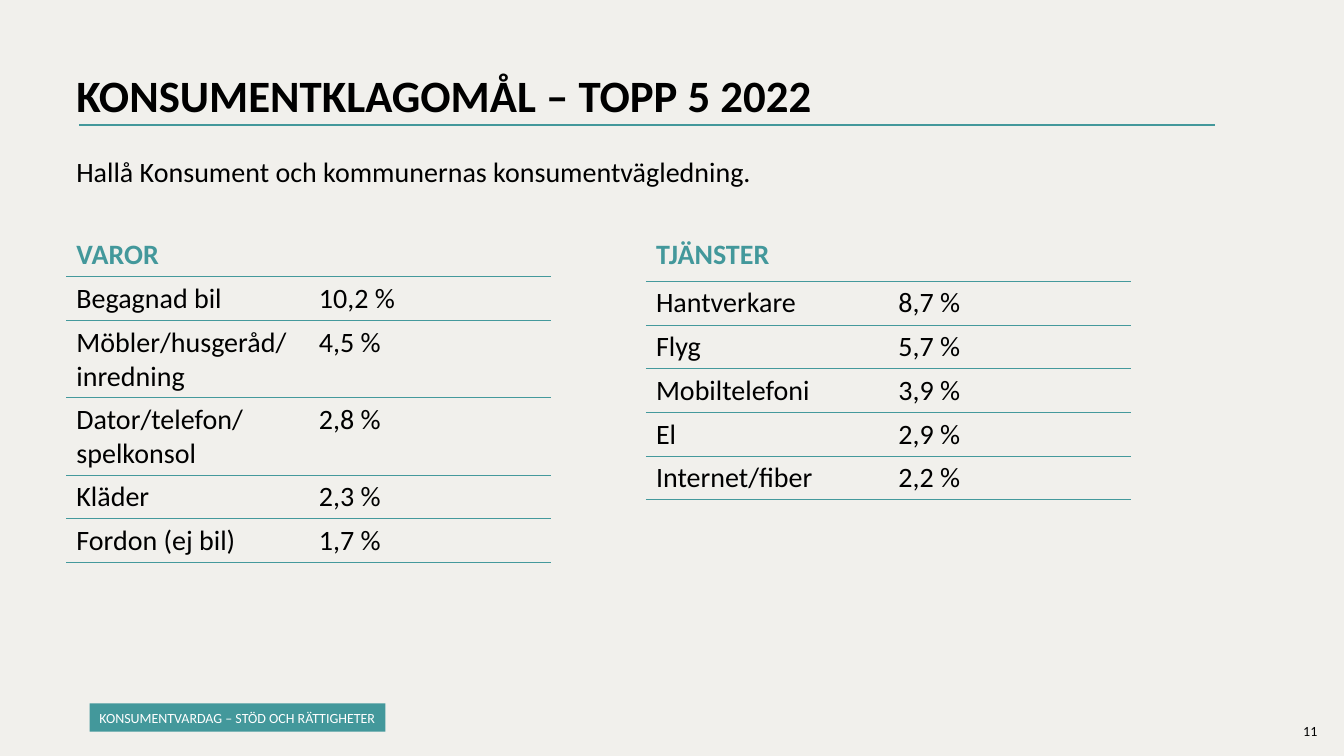
import pptx
import pptx.dml.color
import pptx.enum.shapes
import pptx.enum.text
import pptx.oxml
import pptx.oxml.ns
import pptx.util

Pt = pptx.util.Pt
RGBColor = pptx.dml.color.RGBColor
ALIGN = pptx.enum.text.PP_ALIGN
ANCHOR = pptx.enum.text.MSO_ANCHOR

BACKGROUND = RGBColor(0xF1, 0xF0, 0xEC)
TEAL = RGBColor(0x43, 0x98, 0x9B)
RULE = RGBColor(0x44, 0x99, 0x9C)
BLACK = RGBColor(0, 0, 0)
WHITE = RGBColor(0xFF, 0xFF, 0xFF)
NO_STYLE = "{2D5ABB26-0587-4C30-8999-92F81FD0307C}"
MARGIN = 47.4
COLUMN_WIDTH = 173.2
ROW_HEIGHT = 29.5


def write(frame, text, size=20, color=BLACK, bold=False, spacing=1, anchor=ANCHOR.TOP):
    frame.vertical_anchor = anchor
    para = frame.paragraphs[0]
    para.text = text
    para.alignment = ALIGN.LEFT
    para.line_spacing = spacing
    for span in para.runs:
        span.font.name = "Calibri"
        span.font.size = Pt(size)
        span.font.bold = bold
        span.font.color.rgb = color


def add_border(cell, edge, width):
    """Draw a rule on one edge of a cell: lnT is the top, lnB the bottom."""
    border = pptx.oxml.parse_xml(
        f'<a:{edge} {pptx.oxml.ns.nsdecls("a")} w="{Pt(width)}"><a:solidFill>'
        f'<a:srgbClr val="{RULE}"/></a:solidFill></a:{edge}>')
    cell._tc.get_or_add_tcPr().insert(0, border)


deck = pptx.Presentation()
deck.slide_width = Pt(960)
deck.slide_height = Pt(540)
page = deck.slides.add_slide(deck.slide_layouts[5])
page.background.fill.solid()
page.background.fill.fore_color.rgb = BACKGROUND

# Title and its rule
title = page.shapes.title
title.left, title.top, title.width, title.height = Pt(MARGIN), Pt(49), Pt(828), Pt(57.6)
title.text_frame.auto_size = pptx.enum.text.MSO_AUTO_SIZE.NONE
write(title.text_frame, "KONSUMENTKLAGOMÅL – TOPP 5 2022", size=32, bold=True, spacing=0.9)

title_rule = page.shapes.add_connector(
    pptx.enum.shapes.MSO_CONNECTOR.STRAIGHT, Pt(56.7), Pt(89.3), Pt(867.6), Pt(89.3))
title_rule.line.color.rgb = TEAL
title_rule.line.width = Pt(1.5)
title_rule._element.spPr.append(
    pptx.oxml.parse_xml(f'<a:effectLst {pptx.oxml.ns.nsdecls("a")}/>'))

# Introduction and page number
for text, left, top, width, height, size in (
    ("Hallå Konsument och kommunernas konsumentvägledning.", MARGIN, 106.6, 600, 31.5, 20),
    ("11", 923.8, 512.6, 29, 19.4, 10),
):
    box = page.shapes.add_textbox(Pt(left), Pt(top), Pt(width), Pt(height))
    box.text_frame.word_wrap = True
    write(box.text_frame, text, size=size)

# Complaint tables
goods = [
    ("VAROR", ""),
    ("Begagnad bil", "10,2 %"),
    ("Möbler/husgeråd/\ninredning", "4,5 %"),
    ("Dator/telefon/\nspelkonsol", "2,8 %"),
    ("Kläder", "2,3 %"),
    ("Fordon (ej bil)", "1,7 %"),
]
services = [
    ("TJÄNSTER", ""),
    ("Hantverkare", "8,7 %"),
    ("Flyg", "5,7 %"),
    ("Mobiltelefoni", "3,9 %"),
    ("El", "2,9 %"),
    ("Internet/fiber", "2,2 %"),
]
for complaints, left, header_height in ((goods, MARGIN, ROW_HEIGHT), (services, 461.4, 34.5)):
    table = page.shapes.add_table(
        len(complaints), 2, Pt(left), Pt(166.3), Pt(2 * COLUMN_WIDTH),
        Pt(header_height + ROW_HEIGHT * (len(complaints) - 1))).table
    table.horz_banding = False
    table._tbl.tblPr.find(pptx.oxml.ns.qn("a:tableStyleId")).text = NO_STYLE
    for column in table.columns:
        column.width = Pt(COLUMN_WIDTH)
    for index, values in enumerate(complaints):
        header = index == 0
        table.rows[index].height = Pt(header_height if header else ROW_HEIGHT)
        for cell, value in zip(table.rows[index].cells, values):
            cell.fill.background()
            write(cell.text_frame, value, color=TEAL if header else BLACK, bold=header)
            add_border(cell, "lnB", 1 if header else 0.5)
            if not header:
                add_border(cell, "lnT", 1 if index == 1 else 0.5)

# Section tag
tag = page.shapes.add_shape(
    pptx.enum.shapes.MSO_SHAPE.RECTANGLE, Pt(64), Pt(502.4), Pt(211.4), Pt(20.2))
tag.shadow.inherit = False
tag.fill.solid()
tag.fill.fore_color.rgb = TEAL
tag.line.fill.background()
tag_frame = tag.text_frame
tag_frame.word_wrap = False
tag_frame.margin_left, tag_frame.margin_top = Pt(7.2), Pt(5.8)
tag_frame.margin_right, tag_frame.margin_bottom = Pt(2.9), Pt(3.6)
write(tag_frame, "KONSUMENTVARDAG – STÖD OCH RÄTTIGHETER", size=10, color=WHITE,
      spacing=0.9, anchor=ANCHOR.MIDDLE)

deck.save("out.pptx")
